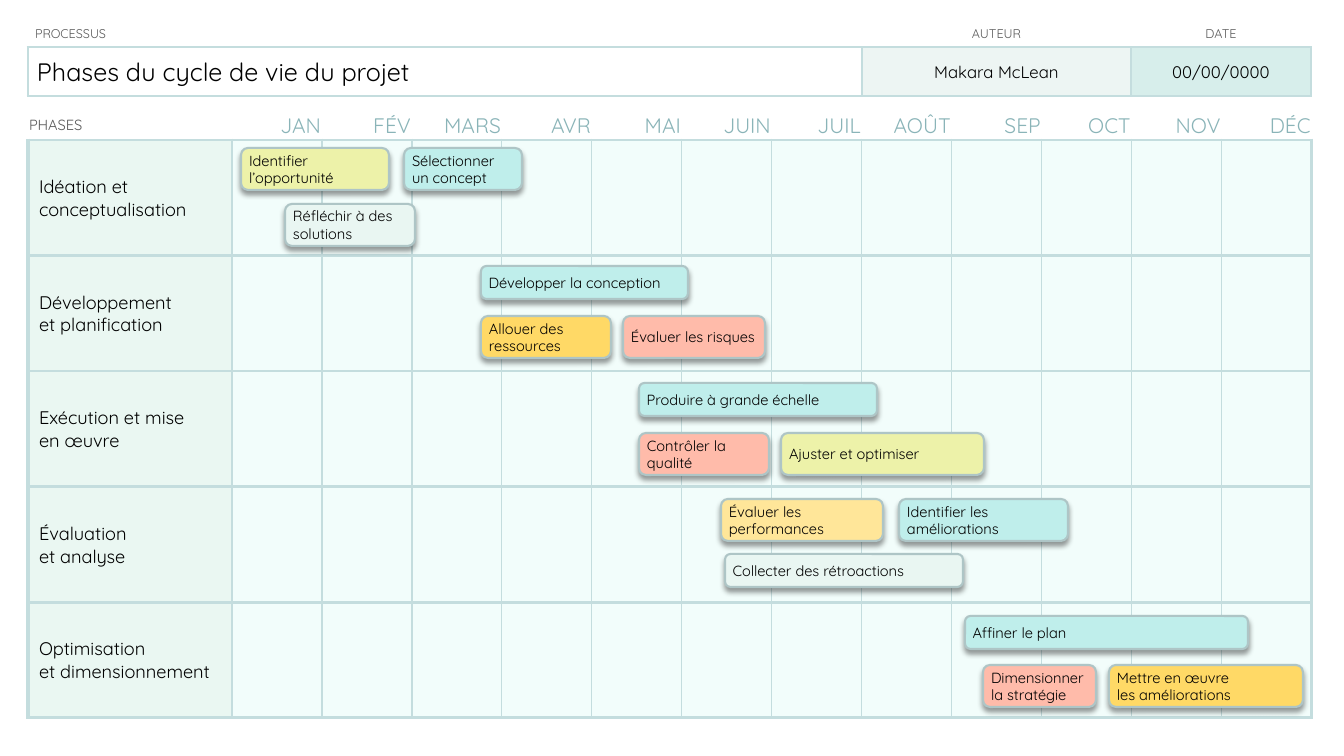
"""Build a one-slide project life cycle Gantt chart."""
import pptx
import pptx.dml.color
import pptx.enum.shapes
import pptx.enum.text
import pptx.oxml
import pptx.oxml.ns
import pptx.util

HEADINGS = ["PROCESSUS", "AUTEUR", "DATE"]
DETAILS = ["Phases du cycle de vie du projet", "Makara McLean", "00/00/0000"]
MONTHS = ["JAN", "FÉV", "MARS", "AVR", "MAI", "JUIN",
          "JUIL", "AOÛT", "SEP", "OCT", "NOV", "DÉC"]
PHASES = [
    "Idéation et conceptualisation",
    "Développement\net planification",
    "Exécution et mise\ven œuvre",
    "Évaluation\net analyse",
    "Optimisation\net dimensionnement",
]
TASKS = [
    ("Identifier l’opportunité", 241, 148, 148, 42, "lime"),
    ("Réfléchir à des solutions", 285, 204, 130, 42, "mint"),
    ("Sélectionner un concept", 404, 148, 118, 42, "aqua"),
    ("Allouer des ressources", 481, 316, 130, 42, "gold"),
    ("Évaluer les risques", 623, 316, 142, 42, "coral"),
    ("Développer la conception", 481, 266, 207, 33, "aqua"),
    ("Contrôler la qualité", 639, 433, 130, 42, "coral"),
    ("Ajuster et optimiser", 781, 433, 203, 42, "lime"),
    ("Produire à grande échelle", 639, 383, 238, 33, "aqua"),
    ("Évaluer les performances", 721, 499, 162, 42, "sand"),
    ("Collecter des rétroactions", 725, 554, 238, 33, "mint"),
    ("Identifier les améliorations", 899, 499, 169, 42, "aqua"),
    ("Mettre en œuvre\nles améliorations", 1109, 665, 194, 42, "gold"),
    ("Dimensionner la stratégie", 983, 665, 113, 42, "coral"),
    ("Affiner le plan", 965, 616, 283, 33, "aqua"),
]

THEME = {
    "font": "Quicksand",
    "color": {
        "text": "000000", "label": "595959", "month": "8AB4B8", "white": "FFFFFF",
        "rule": "C4DDDE", "author": "EDF5F3", "date": "D7EEEB", "phase": "EAF7F2",
        "grid": "F2FDFB", "outline": "AEC5C6", "lime": "EDF2A9", "mint": "E9F6F2",
        "aqua": "BFEEEB", "gold": "FFD966", "sand": "FFE699", "coral": "FFBBAA",
    },
    "size": {"heading": 9, "title": 18, "detail": 12, "corner": 10.5,
             "month": 15, "phase": 13, "task": 10.5},
}

SCALE = 914400 / 100.8
LEFT, HEADER_TOP, GRID_TOP = 28, 19, 110
HEADER_COLS, HEADER_ROWS = [834, 269, 180], [28, 49]
PHASE_COL, MONTH_COL = 204, 90
MONTH_ROW, PHASES_HEIGHT = 30, 578
ALIGN = pptx.enum.text.PP_ALIGN
MIDDLE = pptx.enum.text.MSO_ANCHOR.MIDDLE


def emu(px):
    return round(px * SCALE)


def rgb(name):
    return pptx.dml.color.RGBColor.from_string(THEME["color"][name])


def write(tf, text, size, color="text", align=ALIGN.LEFT):
    tf.text = text
    font = {"name": THEME["font"], "size": pptx.util.Pt(THEME["size"][size])}
    for p in tf.paragraphs:
        p.alignment = align
        for r in p.runs:
            for key, value in font.items():
                setattr(r.font, key, value)
            r.font.color.rgb = rgb(color)


def style_cell(cell, fill=None, borders=None, inset=1):
    margins = {"margin_left": inset, "margin_top": 1, "margin_right": 1, "margin_bottom": 0}
    for key, px in margins.items():
        setattr(cell, key, emu(px))
    cell.vertical_anchor = MIDDLE
    tc_pr = cell._tc.get_or_add_tcPr()
    for side in "LRTB":
        color, width = (borders or {}).get(side, ("white", 0))
        paint = (f'<a:solidFill><a:srgbClr val="{THEME["color"][color]}"/></a:solidFill>'
                 if width else "<a:noFill/>")
        tc_pr.append(pptx.oxml.parse_xml(
            f'<a:ln{side} {pptx.oxml.ns.nsdecls("a")} w="{pptx.util.Pt(width)}">'
            f'{paint}</a:ln{side}>'))
    if fill:
        cell.fill.solid()
        cell.fill.fore_color.rgb = rgb(fill)
    else:
        cell.fill.background()


def add_grid(s, top, cols, rows):
    frame = s.shapes.add_table(len(rows), len(cols), emu(LEFT), emu(top),
                               emu(sum(cols)), emu(sum(rows)))
    table = frame.table
    table.first_row = table.horz_banding = False
    for column, px in zip(table.columns, cols):
        column.width = emu(px)
    for row, px in zip(table.rows, rows):
        row.height = emu(px)
    return table


def add_header(s):
    table = add_grid(s, HEADER_TOP, HEADER_COLS, HEADER_ROWS)
    fills = ["white", "author", "date"]
    for i, (heading, detail) in enumerate(zip(HEADINGS, DETAILS)):
        first = i == 0
        align = ALIGN.LEFT if first else ALIGN.CENTER
        top, bottom = table.cell(0, i), table.cell(1, i)
        style_cell(top, borders={"B": ("rule", 1)}, inset=7 if first else 1)
        write(top.text_frame, heading, "heading", "label", align)
        style_cell(bottom, fills[i],
                   {"L": ("rule", 2.25 if first else 1), "R": ("rule", 1),
                    "T": ("rule", 1), "B": ("rule", 2.25)}, 9 if first else 1)
        write(bottom.text_frame, detail, "title" if first else "detail", align=align)


def add_calendar(s):
    cols = [PHASE_COL] + [MONTH_COL] * len(MONTHS)
    rows = [MONTH_ROW] + [PHASES_HEIGHT / len(PHASES)] * len(PHASES)
    table = add_grid(s, GRID_TOP, cols, rows)
    for c, text in enumerate(["PHASES"] + MONTHS):
        cell = table.cell(0, c)
        style_cell(cell, borders={"L": ("white", 1), "R": ("white", 1),
                                  "T": ("white", 1), "B": ("rule", 2.25)})
        if c:
            write(cell.text_frame, text, "month", "month", ALIGN.RIGHT)
        else:
            write(cell.text_frame, text, "corner", "label")
    for row, phase in enumerate(PHASES, 1):
        for c in range(len(cols)):
            cell = table.cell(row, c)
            style_cell(cell, "grid" if c else "phase",
                       {"L": ("rule", 1 if c else 3),
                        "R": ("rule", 2.25 if c == len(MONTHS) else 1),
                        "T": ("rule", 2.25), "B": ("rule", 2.25)}, 1 if c else 11)
        write(table.cell(row, 0).text_frame, phase, "phase")


def add_task(s, text, x, y, w, h, fill):
    sp = s.shapes.add_shape(pptx.enum.shapes.MSO_SHAPE.ROUNDED_RECTANGLE,
                            emu(x), emu(y), emu(w), emu(h))
    sp.fill.solid()
    sp.fill.fore_color.rgb = rgb(fill)
    sp.line.color.rgb = rgb("outline")
    sp.line.width = pptx.util.Pt(1.5)
    sp.shadow.inherit = False
    effects = sp._element.spPr.find(pptx.oxml.ns.qn("a:effectLst"))
    effects.append(pptx.oxml.parse_xml(
        f'<a:outerShdw {pptx.oxml.ns.nsdecls("a")} blurRad="{pptx.util.Pt(4)}" '
        f'dist="{pptx.util.Pt(3)}" dir="5400000" algn="t" rotWithShape="0">'
        f'<a:srgbClr val="{THEME["color"]["text"]}"><a:alpha val="40000"/></a:srgbClr>'
        '</a:outerShdw>'))
    tf = sp.text_frame
    layout = {"word_wrap": True, "vertical_anchor": MIDDLE,
              "margin_left": emu(6), "margin_right": emu(6),
              "margin_top": emu(2), "margin_bottom": emu(2)}
    for key, value in layout.items():
        setattr(tf, key, value)
    write(tf, text, "task")


def main():
    prs = pptx.Presentation()
    prs.slide_width, prs.slide_height = emu(1344), emu(756)
    s = prs.slides.add_slide(prs.slide_layouts[6])
    add_header(s)
    add_calendar(s)
    for task in TASKS:
        add_task(s, *task)
    prs.save("out.pptx")


if __name__ == "__main__":
    main()
